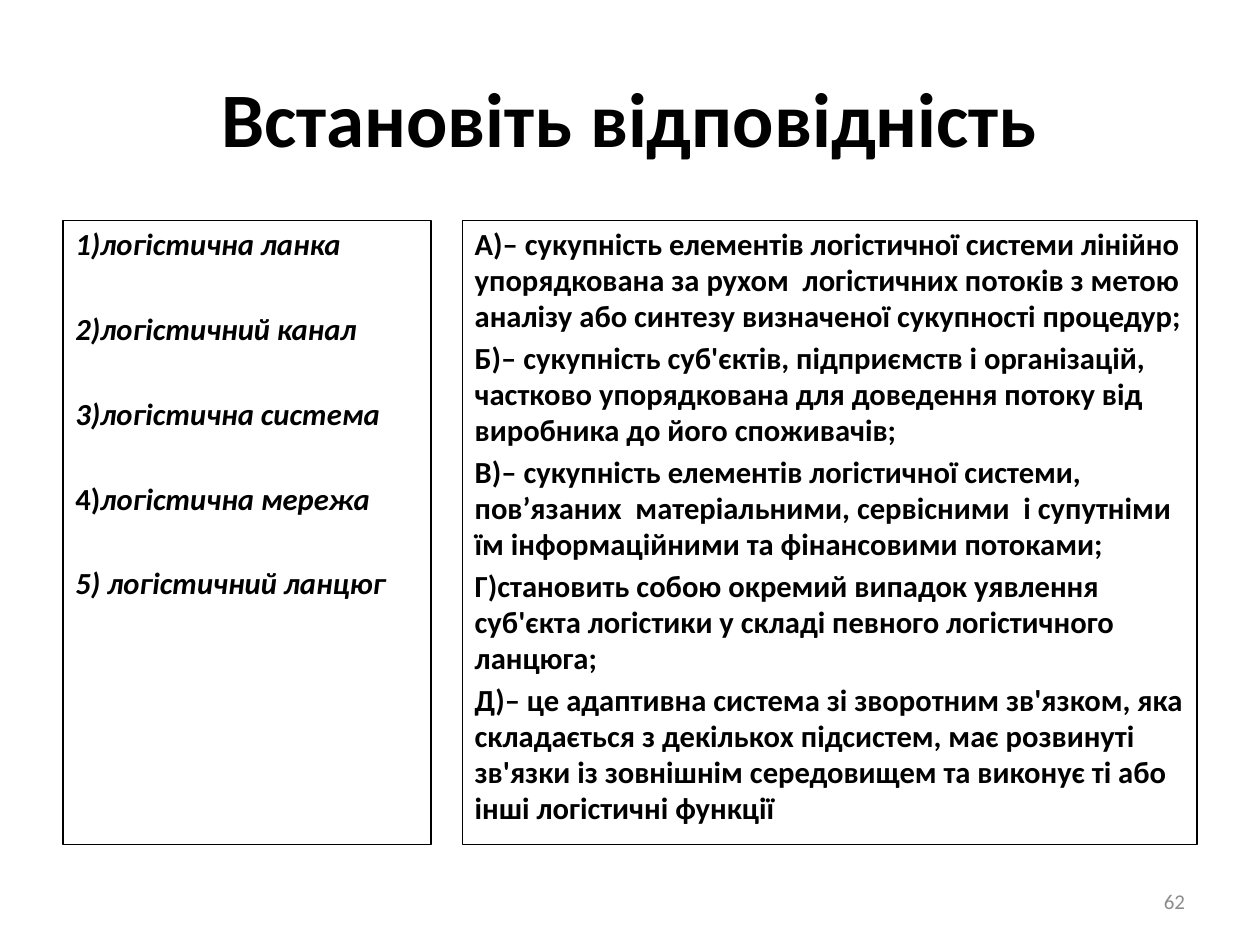
from pptx import Presentation
from pptx import util as u
from pptx.dml.color import RGBColor
from pptx.enum import shapes, text

BLACK = "000000"
GREY = "8C8C8C"
TERMS = [
    [("1)логістична ланка", True)],
    [("2)логістичний канал", True)],
    [("3)логістична система", True)],
    [("4)", False), ("логістична мережа", True)],
    [("5) логістичний ланцюг", True)],
]
DEFINITIONS = [
    "А)– сукупність елементів логістичної системи лінійно упорядкована за рухом  логістичних потоків з метою аналізу або синтезу визначеної сукупності процедур;",
    "Б)– сукупність суб'єктів, підприємств і організацій, частково упорядкована для доведення потоку від виробника до його споживачів;",
    "В)– сукупність елементів логістичної системи, пов’язаних  матеріальними, сервісними  і супутніми їм інформаційними та фінансовими потоками;",
    "Г)становить собою окремий випадок уявлення суб'єкта логістики у складі певного логістичного ланцюга;",
    "Д)– це адаптивна система зі зворотним зв'язком, яка складається з декількох підсистем, має розвинуті зв'язки із зовнішнім середовищем та виконує ті або інші логістичні функції",
]


def colour(value):
    return RGBColor.from_string(value)


class MatchingSlide:
    font = "Calibri"
    body_size = 17.5
    line_spacing = 0.98

    def __init__(self, slide):
        self.slide = slide

    def add_run(self, paragraph, wording, size, ink=BLACK, bold=True, italic=False):
        run = paragraph.add_run()
        run.text = wording
        run.font.name = self.font
        run.font.size = u.Pt(size)
        run.font.bold = bold
        run.font.italic = italic
        run.font.color.rgb = colour(ink)

    def label(self, area, wording, size, align, ink=BLACK, bold=True):
        box = self.slide.shapes.add_textbox(*map(u.Cm, area))
        frame = box.text_frame
        frame.word_wrap = True
        frame.vertical_anchor = text.MSO_ANCHOR.MIDDLE
        paragraph = frame.paragraphs[0]
        paragraph.alignment = align
        self.add_run(paragraph, wording, size, ink, bold)

    def panel(self, area, entries, gap):
        box = self.slide.shapes.add_shape(
            shapes.MSO_SHAPE.RECTANGLE, *map(u.Cm, area))
        box.shadow.inherit = False
        box.fill.background()
        box.line.color.rgb = colour(BLACK)
        box.line.width = u.Pt(0.75)
        frame = box.text_frame
        frame.word_wrap = True
        frame.vertical_anchor = text.MSO_ANCHOR.TOP
        for index, entry in enumerate(entries):
            paragraph = frame.add_paragraph() if index else frame.paragraphs[0]
            paragraph.alignment = text.PP_ALIGN.LEFT
            paragraph.line_spacing = self.line_spacing
            if index:
                paragraph.space_before = u.Pt(gap)
            for wording, italic in entry:
                self.add_run(paragraph, wording, self.body_size, italic=italic)


def main():
    deck = Presentation()
    deck.slide_width, deck.slide_height = u.Cm(25.4), u.Cm(19.05)
    page = MatchingSlide(deck.slides.add_slide(deck.slide_layouts[6]))
    page.label((1.27, 0.76, 22.86, 3.18), "Встановіть відповідність", 44,
               text.PP_ALIGN.CENTER)
    page.panel((1.27, 4.45, 7.42, 12.57), TERMS, 27.9)
    page.panel((9.32, 4.45, 14.81, 12.57),
               [[(wording, False)] for wording in DEFINITIONS], 3.5)
    page.label((18.21, 17.65, 5.93, 1.02), "62", 12, text.PP_ALIGN.RIGHT,
               GREY, bold=False)
    deck.save("out.pptx")


if __name__ == "__main__":
    main()
